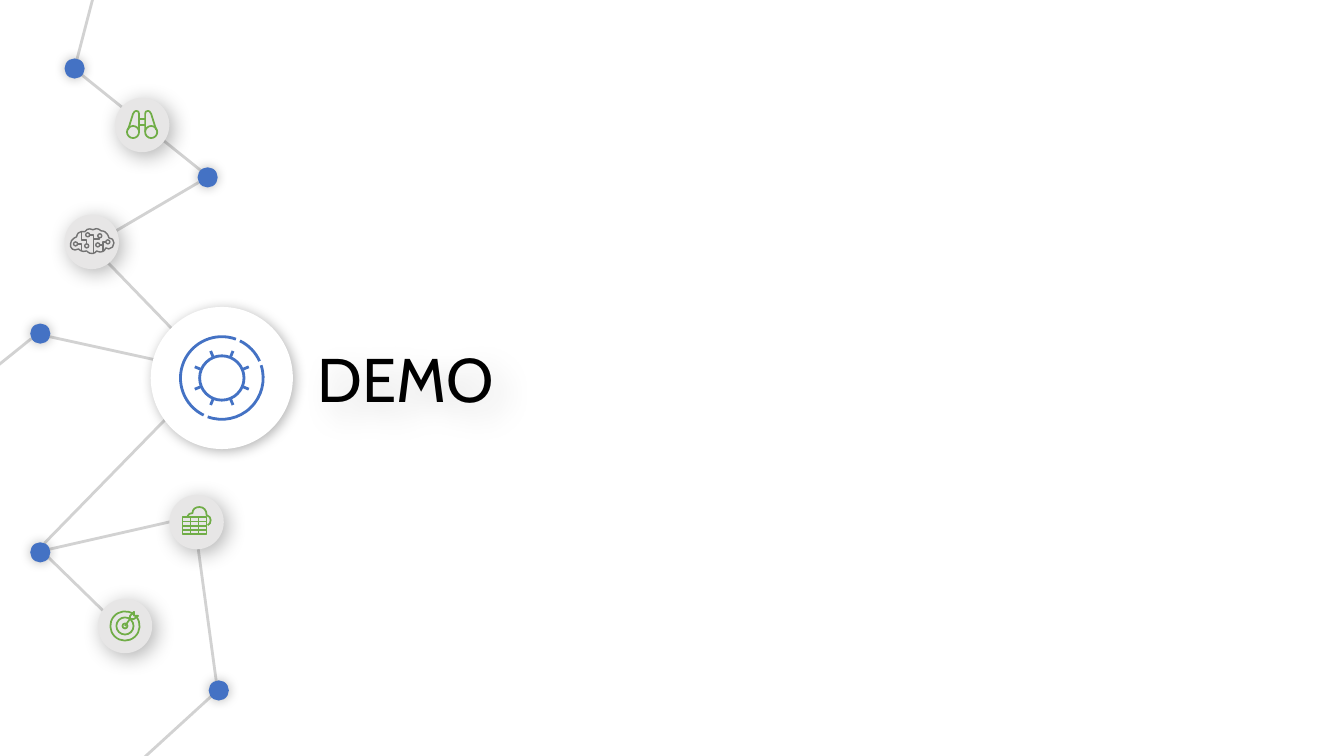
"""Build the demo divider slide with its network of icons."""
from math import ceil, cos, radians, sin, tan

from lxml.etree import SubElement
from pptx import Presentation
from pptx.dml.color import RGBColor as RGB
from pptx.enum.shapes import MSO_CONNECTOR as LINK, MSO_SHAPE as SHAPE
from pptx.enum.text import MSO_ANCHOR as ANCHOR, MSO_AUTO_SIZE as AUTO, PP_ALIGN as ALIGN
from pptx.oxml.ns import qn
from pptx.util import Inches, Pt

INK = {"blue": "4472C4", "green": "70AD47", "grey": "737373", "link": "D2D2D2",
       "disc": "E7E6E6", "white": "FFFFFF", "black": "000000"}
LINKS = [((0.31, 3.36), (-0.1, 3.69)), ((2.09, 3.69), (0.49, 3.34)),
         ((2.18, 6.83), (1.25, 7.68)), ((1.93, 5.18), (2.17, 6.94)),
         ((0.91, 2.44), (2.09, 3.66)), ((0.44, 5.49), (1.28, 6.31)),
         ((0.44, 5.46), (1.85, 5.14)), ((2.09, 3.7), (0.44, 5.39)),
         ((1.97, 1.81), (0.93, 2.42)), ((0.77, 0.71), (2.04, 1.73)),
         ((0.75, 0.64), (0.93, -0.05))]
DOTS = [(2.06, 1.76), (2.17, 6.85), (0.74, 0.68), (0.4, 5.48), (0.4, 3.31)]
NODES = [(1.07, 2.4), (0.97, 2.43), (0.99, 2.34), (0.87, 2.33), (0.86, 2.44), (0.75, 2.42)]
TRACES = [[(0.77, 2.42), (0.81, 2.42), (0.81, 2.49)],
          [(0.88, 2.33), (0.93, 2.33), (0.93, 2.51)],
          [(0.93, 2.37), (0.99, 2.37), (0.99, 2.35)],
          [(0.81, 2.3), (0.81, 2.38), (0.86, 2.38), (0.86, 2.42)],
          [(1.05, 2.4), (1.02, 2.4), (1.02, 2.46)],
          [(0.99, 2.43), (1.02, 2.43), (1.02, 2.49)]]
LOBES = [(1.05, 2.46), (1.06, 2.46), (1.07, 2.47), (1.08, 2.47),
         (1.11, 2.47), (1.13, 2.44), (1.13, 2.41), (1.13, 2.38), (1.11, 2.36), (1.08, 2.36),
         (1.08, 2.36), (1.07, 2.29), (1, 2.29), (1, 2.29), (0.97, 2.25), (0.92, 2.28),
         (0.92, 2.28), (0.87, 2.25), (0.84, 2.3), (0.84, 2.3), (0.77, 2.28), (0.76, 2.35),
         (0.76, 2.35), (0.7, 2.37), (0.7, 2.42), (0.69, 2.46), (0.73, 2.5), (0.78, 2.47),
         (0.78, 2.47), (0.81, 2.51), (0.86, 2.49), (0.86, 2.49), (0.91, 2.55), (0.96, 2.49),
         (0.96, 2.49), (1.02, 2.53), (1.05, 2.46)]
CLOUD = [(1.86, 5.12), (1.87, 5.1), (1.89, 5.09), (1.91, 5.09),
         (1.91, 5.05), (1.94, 5.03), (1.98, 5.03), (2.02, 5.03), (2.05, 5.06), (2.05, 5.11),
         (2.08, 5.12), (2.09, 5.14), (2.09, 5.16), (2.09, 5.19), (2.08, 5.2), (2.06, 5.21)]
TUBE = [(1.38, 1.31), (1.38, 1.31), (1.38, 1.13), (1.38, 1.13),
        (1.38, 1.11), (1.37, 1.1), (1.35, 1.1), (1.34, 1.1), (1.33, 1.11), (1.32, 1.13),
        (1.32, 1.13), (1.27, 1.29), (1.27, 1.29)]
ARROW = [(1.24, 6.21), (1.29, 6.14), (1.29, 6.11), (1.33, 6.07), (1.33, 6.11),
         (1.37, 6.11), (1.33, 6.14), (1.29, 6.14)]


def tint(name):
    return RGB.from_string(INK[name])


def shade(shape, alpha, blur, dist=0, angle=0):
    shape.shadow.inherit = False
    fx = shape.element.spPr.find(qn("a:effectLst"))
    cast = SubElement(fx, qn("a:outerShdw"), blurRad=str(Pt(blur)), dist=str(Pt(dist)),
                      dir=str(angle * 60000), algn="ctr", rotWithShape="0")
    hue = SubElement(cast, qn("a:srgbClr"), val=INK["black"])
    SubElement(hue, qn("a:alpha"), val=str(alpha * 1000))


def line(shapes, start, end, hue, width):
    link = shapes.add_connector(LINK.STRAIGHT, *map(Inches, start + end))
    link.line.color.rgb = tint(hue)
    link.line.width = Pt(width)
    SubElement(link.element.spPr, qn("a:effectLst"))
    return link


def disc(shapes, mid, size, hue, *cast):
    x, y = (value - size / 2 for value in mid)
    ball = shapes.add_shape(SHAPE.OVAL, Inches(x), Inches(y), Inches(size), Inches(size))
    ball.fill.solid()
    ball.fill.fore_color.rgb = tint(hue)
    ball.line.fill.background()
    shade(ball, *cast)


def hollow(shape, hue, width):
    shape.shadow.inherit = False
    shape.fill.background()
    shape.line.color.rgb = tint(hue)
    shape.line.width = Pt(width)


def arc(mid, size, start=0, end=360):
    count = ceil((end - start) / 90)
    step = radians((end - start) / count)
    pull = 4 / 3 * tan(step / 4)
    knots = []
    for i in range(count + 1):
        turn = radians(start) + i * step
        for k in (-pull, 0, pull):
            knots.append((mid[0] + size * (cos(turn) - k * sin(turn)),
                          mid[1] + size * (sin(turn) + k * cos(turn))))
    return knots[1:-1]


def bend(shape, count):
    track = shape.element.find(".//" + qn("a:path"))
    contour, run = 0, []
    for step in list(track):
        if step.tag == qn("a:moveTo"):
            contour, run = contour + 1, []
        elif step.tag == qn("a:lnTo") and contour <= count:
            run.append(step)
            if len(run) == 3:
                track.replace(run[0], cubic(track, run))
                track.remove(run[1])
                track.remove(run[2])
                run = []


def cubic(track, run):
    curve = SubElement(track, qn("a:cubicBezTo"))
    for step in run:
        curve.append(step[0])
    return curve


def trace(shapes, curves, lines, hue, width):
    pen = None
    for stroke in curves + lines:
        spots = [(Inches(x), Inches(y)) for x, y in stroke]
        if pen is None:
            pen = shapes.build_freeform(*spots[0])
        else:
            pen.move_to(*spots[0])
        pen.add_line_segments(spots[1:], close=False)
    shape = pen.convert_to_shape()
    bend(shape, len(curves))
    hollow(shape, hue, width)


def badge(shapes, mid, curves, lines, hue="green", width=1.25):
    disc(shapes, mid, 0.54, "disc", 30, 15, 4, 45)
    trace(shapes, curves, lines, hue, width)


def scope(shapes):
    twin = [(2.82 - x, y) for x, y in TUBE]
    rings = [arc((x, 1.31), 0.06) for x in (1.32, 1.5)]
    bars = [[(1.38, y), (1.44, y)] for y in (1.18, 1.24)]
    badge(shapes, (1.41, 1.24), rings + [TUBE, twin], bars)


def target(shapes):
    mid = (1.24, 6.21)
    rings = [arc(mid, 0.145, -38, 306), arc(mid, 0.085), arc(mid, 0.025)]
    badge(shapes, mid, rings, [ARROW])


def brain(shapes):
    rings = [arc(node, 0.02) for node in NODES]
    badge(shapes, (0.91, 2.4), rings + [LOBES], TRACES, "grey", 1)


def table(shapes):
    left, top, wide, high = 1.81, 5.13, 0.24, 0.17
    disc(shapes, (1.95, 5.18), 0.54, "disc", 30, 15, 4, 45)
    frame = shapes.add_shape(SHAPE.RECTANGLE, *map(Inches, (left, top, wide, high)))
    hollow(frame, "green", 1.25)
    for i in (1, 2):
        x = left + wide * i / 3
        line(shapes, (x, top), (x, top + high), "green", 1.25)
    for i in (1, 2, 3):
        y = top + high * i / 4
        row = line(shapes, (left, y), (left + wide, y), "green", 1.25)
        if i == 2:
            row.begin_connect(frame, 1)
            row.end_connect(frame, 3)
    trace(shapes, [CLOUD], [], "green", 1.25)


def hub(shapes):
    mid = (2.2, 3.75)
    disc(shapes, mid, 1.41, "white", 30, 9, 2, 45)
    rims = [arc(mid, 0.41, *span) for span in ((116, 290), (-18, 110), (-64, -24))]
    teeth = []
    for i in range(8):
        turn = radians(22.5 + 45 * i)
        teeth.append([(mid[0] + r * cos(turn), mid[1] + r * sin(turn)) for r in (0.22, 0.29)])
    trace(shapes, [arc(mid, 0.22)] + rims, teeth, "blue", 2)


def write(shape, text, size=44, font="Cabin", hue="black"):
    frame = shape.text_frame
    frame.text = text
    frame.word_wrap = True
    frame.auto_size = AUTO.SHAPE_TO_FIT_TEXT
    frame.vertical_anchor = ANCHOR.MIDDLE
    frame.margin_left = frame.margin_right = Inches(0.1)
    frame.margin_top = frame.margin_bottom = Inches(0.1)
    frame.paragraphs[0].alignment = ALIGN.LEFT
    face = frame.paragraphs[0].runs[0].font
    face.size, face.name, face.color.rgb = Pt(size), font, tint(hue)


def main():
    deck = Presentation()
    deck.slide_width, deck.slide_height = Inches(13.33), Inches(7.5)
    slide = deck.slides.add_slide(deck.slide_layouts[5])
    shapes, title = slide.shapes, slide.shapes.title
    title.left, title.top, title.width, title.height = map(Inches, (3.05, 3.28, 5.56, 0.94))
    write(title, "DEMO")
    shade(title, 15, 22, 12, 45)
    for start, end in LINKS:
        line(shapes, start, end, "link", 2)
    scope(shapes.add_group_shape().shapes)
    for dot in DOTS:
        disc(shapes, dot, 0.2, "blue", 27, 8)
    for icon in (table, hub, target):
        icon(shapes.add_group_shape().shapes)
    brain(shapes)
    deck.save("out.pptx")


if __name__ == "__main__":
    main()
